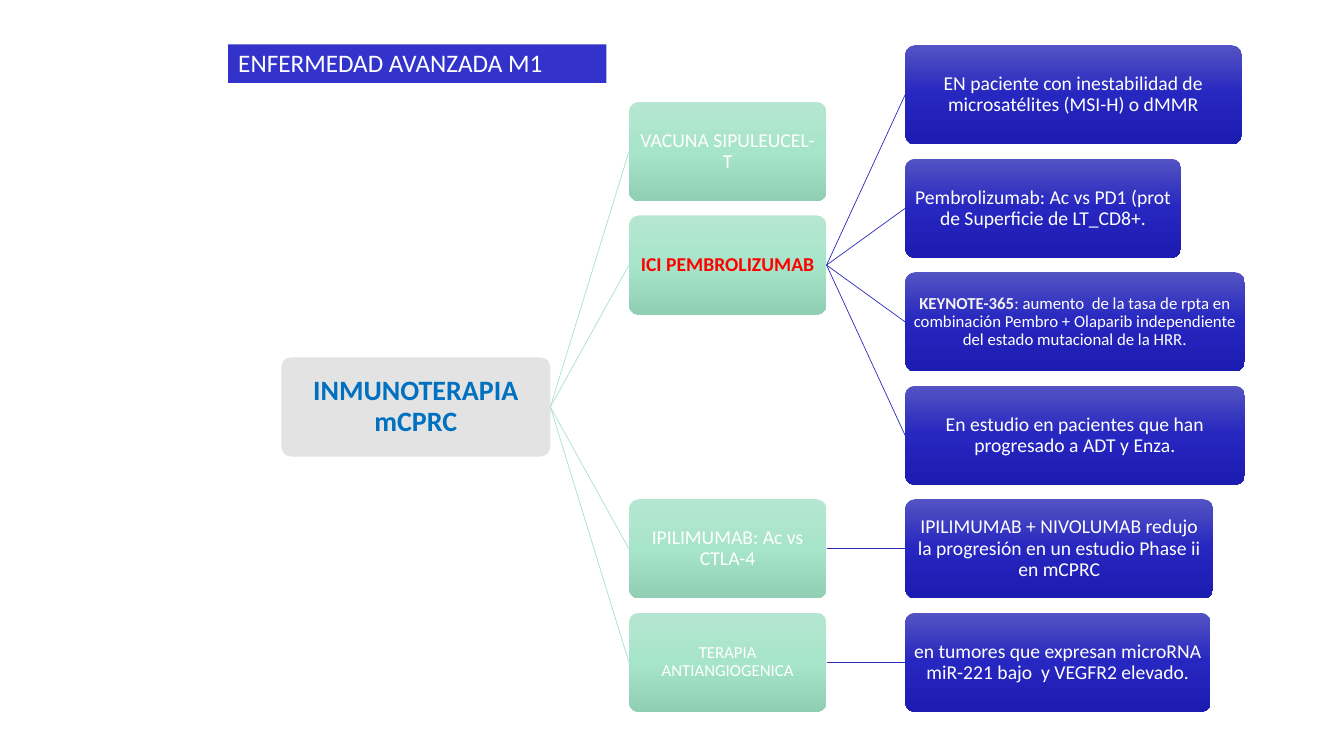
from copy import deepcopy

from lxml import etree
from pptx import Presentation
from pptx.dml.color import RGBColor
from pptx.enum.shapes import MSO_CONNECTOR, MSO_SHAPE
from pptx.enum.text import MSO_ANCHOR, MSO_AUTO_SIZE, PP_ALIGN
from pptx.oxml.ns import qn
from pptx.util import Cm, Pt

ROUNDED = MSO_SHAPE.ROUNDED_RECTANGLE
STRAIGHT = MSO_CONNECTOR.STRAIGHT
LEFT, CENTER = PP_ALIGN.LEFT, PP_ALIGN.CENTER
MIDDLE = MSO_ANCHOR.MIDDLE
NO_AUTOFIT = MSO_AUTO_SIZE.NONE
LEFT_SITE, RIGHT_SITE = 1, 3  # connection sites of a rounded rectangle

FONT = "Calibri"
COLORS = {
    "banner": "3333CC", "white": "FFFFFF", "pale": "F2F2F2",
    "blue": "0070C0", "red": "FF0000",
    "mint_line": "AAE2CA", "indigo_line": "2D2DB9",
}
GRADIENTS = {
    "root": ["E3E3E3"],
    "mint": ["B5E6D1", "A7E5CA", "91CFB4"],
    "indigo": ["5353C3", "2626C0", "1C1CB1"],
}

# Tree grid, in cm: rows are counted from the top box of the right column
TOP, ROW_STEP, BOX_HEIGHT = 1.14, 2.86, 2.5
ROOT_LEFT, ROOT_WIDTH = 7.09, 6.78
THERAPY_LEFT, THERAPY_WIDTH = 15.85, 4.98
DETAIL_LEFT = 22.81

# Runs are (text, size, colour, bold)
root_runs = [("INMUNOTERAPIA mCPRC", 20, "blue", True)]

# Each therapy: row, runs, details; each detail: row, width, runs
therapies = [
    (0.5, [("VACUNA SIPULEUCEL-T", 14, "white", False)], []),
    (1.5, [("ICI PEMBROLIZUMAB", 14, "red", True)], [
        (0, 8.48, [("EN paciente con inestabilidad de microsatélites (MSI-H) o dMMR",
                    14, "white", False)]),
        (1, 6.96, [("Pembrolizumab: Ac vs PD1 (prot de Superficie de LT_CD8+.",
                    14, "white", False)]),
        (2, 8.56, [("KEYNOTE-365", 12, "pale", True),
                   (": ", 12, "pale", False),
                   ("aumento  de la tasa de rpta en combinación Pembro + Olaparib "
                    "independiente del estado mutacional de la HRR.",
                    12, "white", False)]),
        (3, 8.56, [("En estudio en pacientes que han progresado a ADT y Enza.",
                    14, "white", False)]),
    ]),
    (4, [("IPILIMUMAB: Ac vs CTLA-4", 14, "white", False)], [
        (4, 7.77, [("IPILIMUMAB + NIVOLUMAB redujo la progresión en un estudio "
                    "Phase ii en mCPRC", 14, "white", False)]),
    ]),
    (5, [("TERAPIA ANTIANGIOGENICA", 12, "white", False)], [
        (5, 7.7, [("en tumores que expresan microRNA miR-221 bajo  y VEGFR2 elevado.",
                   14, "white", False)]),
    ]),
]

presentation = Presentation()
presentation.slide_width, presentation.slide_height = Cm(33.87), Cm(19.05)
slide = presentation.slides.add_slide(presentation.slide_layouts[5])


def write_runs(shape, runs, alignment, line_spacing):
    frame = shape.text_frame
    frame.word_wrap = True
    frame.auto_size = NO_AUTOFIT
    frame.vertical_anchor = MIDDLE
    paragraph = frame.paragraphs[0]
    paragraph.alignment = alignment
    paragraph.line_spacing = line_spacing
    for text, size, color, bold in runs:
        run = paragraph.add_run()
        run.text = text
        run.font.name = FONT
        run.font.size = Pt(size)
        run.font.bold = bold
        run.font.color.rgb = RGBColor.from_string(COLORS[color])


def add_node(left, row, width, gradient, runs, parent=None, line_color=None):
    # Rounded box
    box = slide.shapes.add_shape(ROUNDED, Cm(left), Cm(TOP + row * ROW_STEP),
                                 Cm(width), Cm(BOX_HEIGHT))
    box.adjustments[0] = 0.1
    box.shadow.inherit = False
    box.line.fill.background()
    tones = GRADIENTS[gradient]
    if len(tones) == 1:
        box.fill.solid()
        box.fill.fore_color.rgb = RGBColor.from_string(tones[0])
    else:
        box.fill.gradient()
        box.fill.gradient_angle = 270
        stop_list = box._element.spPr.find(qn("a:gradFill")).find(qn("a:gsLst"))
        stop_list.insert(1, deepcopy(stop_list[0]))
        for index, stop in enumerate(box.fill.gradient_stops):
            stop.position = index / 2
            stop.color.rgb = RGBColor.from_string(tones[index])
    frame = box.text_frame
    frame.margin_left = frame.margin_right = Cm(0.1)
    frame.margin_top = frame.margin_bottom = Cm(0.1)
    write_runs(box, runs, CENTER, 0.9)

    # Line from the parent box
    if parent is not None:
        connector = slide.shapes.add_connector(STRAIGHT, 0, 0, 0, 0)
        connector.begin_connect(parent, RIGHT_SITE)
        connector.end_connect(box, LEFT_SITE)
        connector.line.width = Pt(0.5)
        connector.line.color.rgb = RGBColor.from_string(COLORS[line_color])
        etree.SubElement(connector._element.spPr, qn("a:effectLst"))
    return box


# Title banner
title = slide.shapes.title
title.left, title.top, title.width, title.height = Cm(5.75), Cm(1.12), Cm(9.53), Cm(0.97)
title.fill.solid()
title.fill.fore_color.rgb = RGBColor.from_string(COLORS["banner"])
write_runs(title, [("ENFERMEDAD AVANZADA M1", 18, "white", False)], LEFT, 0.93)

# Tree: the root sits midway between the first and last therapy
root_row = (therapies[0][0] + therapies[-1][0]) / 2
root = add_node(ROOT_LEFT, root_row, ROOT_WIDTH, "root", root_runs)
for therapy_row, therapy_runs, details in therapies:
    therapy = add_node(THERAPY_LEFT, therapy_row, THERAPY_WIDTH, "mint",
                       therapy_runs, root, "mint_line")
    for detail_row, detail_width, detail_runs in details:
        add_node(DETAIL_LEFT, detail_row, detail_width, "indigo",
                 detail_runs, therapy, "indigo_line")

presentation.save("out.pptx")
